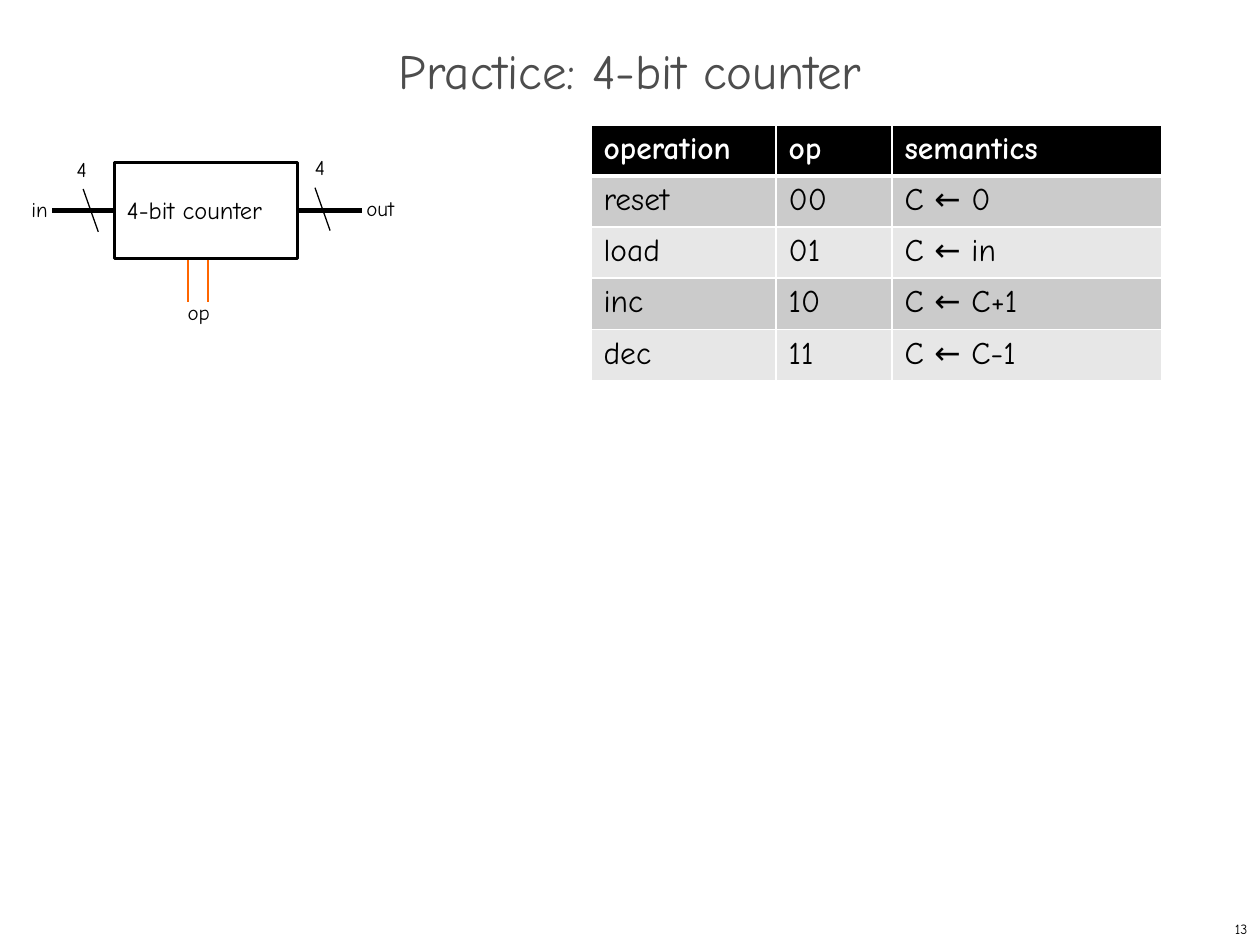
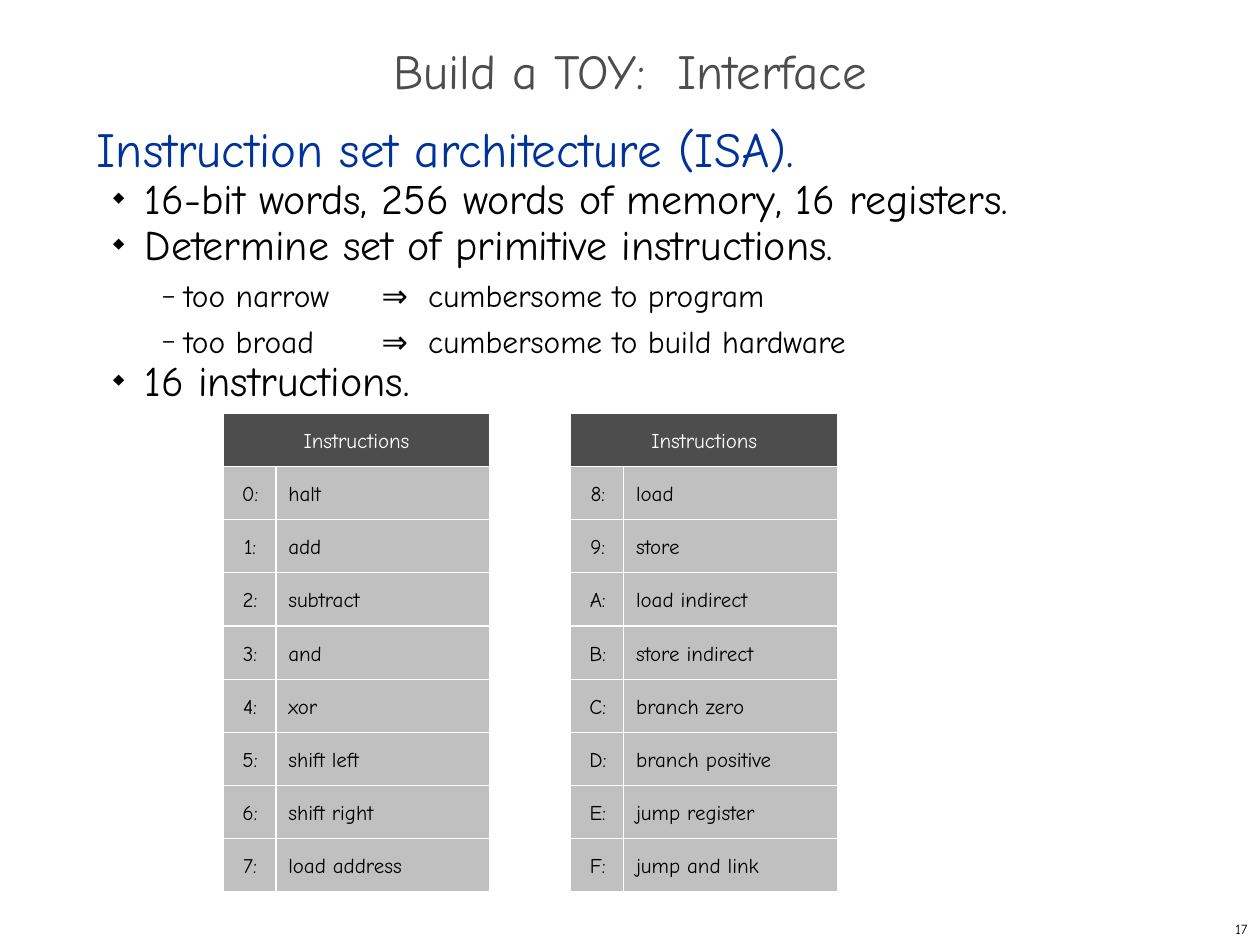
from dataclasses import dataclass

from lxml.etree import SubElement
from pptx import Presentation
from pptx.dml.color import RGBColor
from pptx.enum.shapes import MSO_CONNECTOR, MSO_SHAPE
from pptx.enum.text import MSO_ANCHOR, PP_ALIGN
from pptx.oxml.ns import qn
from pptx.shapes.autoshape import Shape
from pptx.slide import Slide
from pptx.table import _Cell
from pptx.text.text import TextFrame, _Paragraph
from pptx.util import Inches, Pt

FONT = "Comic Neue"
BLACK = RGBColor(0x00, 0x00, 0x00)
WHITE = RGBColor(0xFF, 0xFF, 0xFF)
CHARCOAL = RGBColor(0x4D, 0x4D, 0x4D)
SILVER = RGBColor(0xC0, 0xC0, 0xC0)
BAND_DARK = RGBColor(0xCB, 0xCB, 0xCB)
BAND_LIGHT = RGBColor(0xE7, 0xE7, 0xE7)
ORANGE = RGBColor(0xFF, 0x66, 0x00)
BLUE = RGBColor(0x00, 0x33, 0x99)


@dataclass(frozen=True)
class Box:
    left: float
    top: float
    width: float
    height: float

    def lengths(self) -> tuple[Inches, ...]:
        return tuple(Inches(v) for v in (self.left, self.top, self.width, self.height))


@dataclass(frozen=True)
class Label:
    text: str
    box: Box
    size: int = 12


@dataclass(frozen=True)
class Wire:
    start: tuple[float, float]
    end: tuple[float, float]
    width: float
    color: RGBColor = BLACK


@dataclass(frozen=True)
class Level:
    size: int
    color: RGBColor = BLACK
    bullet: str = ""
    bullet_percent: int = 100
    margin: float = 0
    hanging: float = 0
    tabs: tuple[float, ...] = ()


@dataclass(frozen=True)
class Tile:
    text: str
    box: Box
    fill: RGBColor = SILVER
    color: RGBColor = BLACK
    alignment: PP_ALIGN = PP_ALIGN.CENTER


TITLE_BOX = Box(0, 0.36, 10, 0.5)
NUMBER_BOX = Box(7.92, 7.25, 2.08, 0.25)

COUNTER_BOX = Box(0.91, 1.29, 1.45, 0.76)
COUNTER_LABELS = (
    Label("4-bit counter", Box(0.91, 1.5, 1.43, 0.34), 14),
    Label("4", Box(0.51, 1.19, 0.31, 0.3)),
    Label("4", Box(2.4, 1.18, 0.31, 0.3)),
    Label("in", Box(0.15, 1.51, 0.34, 0.3)),
    Label("out", Box(2.81, 1.5, 0.46, 0.3)),
    Label("op", Box(1.39, 2.33, 0.38, 0.3)),
)
COUNTER_WIRES = (
    Wire((0.91, 1.67), (0.41, 1.67), 2.5),
    Wire((2.87, 1.67), (2.37, 1.67), 2.5),
    Wire((1.49, 2.05), (1.49, 2.4), 1.25, ORANGE),
    Wire((1.65, 2.05), (1.65, 2.4), 1.25, ORANGE),
    Wire((0.66, 1.5), (0.78, 1.84), 0.75),
    Wire((2.5, 1.49), (2.62, 1.83), 0.75),
)
OPERATIONS = (
    ("operation", "op", "semantics"),
    ("reset", "00", "C ← 0"),
    ("load", "01", "C ← in"),
    ("inc", "10", "C ← C+1"),
    ("dec", "11", "C ← C-1"),
)
OPERATIONS_BOX = Box(4.69, 0.99, 4.53, 2.03)
OPERATION_WIDTHS = (1.47, 0.92, 2.14)

LEVELS = (
    Level(28, BLUE),
    Level(24, bullet="◆", bullet_percent=35, margin=0.38, hanging=0.25),
    Level(18, bullet="–", bullet_percent=80, margin=0.69, hanging=0.18, tabs=(2.26, 2.63)),
)
ISA_POINTS = (
    (0, "Instruction set architecture (ISA)."),
    (1, "16-bit words, 256 words of memory, 16 registers."),
    (1, "Determine set of primitive instructions."),
    (2, "too narrow\t⇒\tcumbersome to program"),
    (2, "too broad\t⇒\tcumbersome to build hardware"),
    (1, "16 instructions."),
)
INSTRUCTIONS = (
    "halt", "add", "subtract", "and", "xor", "shift left", "shift right", "load address",
    "load", "store", "load indirect", "store indirect",
    "branch zero", "branch positive", "jump register", "jump and link",
)
INSTRUCTION_LEFTS = (1.77, 4.53)
INSTRUCTIONS_TOP = 3.28
INSTRUCTIONS_PER_COLUMN = 8
TILE_HEIGHT = 3.8 / (INSTRUCTIONS_PER_COLUMN + 1)
OPCODE_WIDTH = 0.43
NAME_WIDTH = 1.7
HEADER_WIDTH = 2.12


def write(paragraph: _Paragraph, text: str, size: int, color: RGBColor = BLACK,
          bold: bool = False) -> None:
    run = paragraph.add_run()
    run.text = text
    run.font.name = FONT
    run.font.size = Pt(size)
    run.font.bold = bold
    run.font.color.rgb = color


def add_text_frame(slide: Slide, box: Box, wrap: bool = True) -> TextFrame:
    frame = slide.shapes.add_textbox(*box.lengths()).text_frame
    frame.word_wrap = wrap
    return frame


def add_frame_slide(deck: Presentation, title: str, number: int) -> Slide:
    """Add a blank slide with the shared title and slide number."""
    slide = deck.slides.add_slide(deck.slide_layouts[6])
    heading = add_text_frame(slide, TITLE_BOX)
    heading.vertical_anchor = MSO_ANCHOR.MIDDLE
    heading.paragraphs[0].alignment = PP_ALIGN.CENTER
    heading.paragraphs[0].line_spacing = 0.7
    write(heading.paragraphs[0], title, 28, CHARCOAL)
    footer = add_text_frame(slide, NUMBER_BOX)
    footer.vertical_anchor = MSO_ANCHOR.MIDDLE
    footer.paragraphs[0].alignment = PP_ALIGN.RIGHT
    write(footer.paragraphs[0], str(number), 8)
    return slide


def add_label(slide: Slide, label: Label) -> None:
    frame = add_text_frame(slide, label.box, wrap=False)
    write(frame.paragraphs[0], label.text, label.size)


def add_wire(slide: Slide, wire: Wire) -> None:
    ends = (Inches(v) for v in (*wire.start, *wire.end))
    line = slide.shapes.add_connector(MSO_CONNECTOR.STRAIGHT, *ends)
    line.line.color.rgb = wire.color
    line.line.width = Pt(wire.width)
    SubElement(line._element.spPr, qn("a:effectLst"))


def add_rectangle(slide: Slide, box: Box, outline: RGBColor, width: float) -> Shape:
    rectangle = slide.shapes.add_shape(MSO_SHAPE.RECTANGLE, *box.lengths())
    rectangle.shadow.inherit = False
    rectangle.fill.background()
    rectangle.line.color.rgb = outline
    rectangle.line.width = Pt(width)
    return rectangle


def add_tile(slide: Slide, tile: Tile) -> None:
    rectangle = add_rectangle(slide, tile.box, WHITE, 0.75)
    rectangle.fill.solid()
    rectangle.fill.fore_color.rgb = tile.fill
    frame = rectangle.text_frame
    frame.word_wrap = False
    frame.vertical_anchor = MSO_ANCHOR.MIDDLE
    frame.paragraphs[0].alignment = tile.alignment
    write(frame.paragraphs[0], tile.text, 12, tile.color)


def set_borders(cell: _Cell, top: float, bottom: float) -> None:
    properties = cell._tc.get_or_add_tcPr()
    for edge, width in (("lnL", 1), ("lnR", 1), ("lnT", top), ("lnB", bottom)):
        line = SubElement(properties, qn(f"a:{edge}"), w=str(Pt(width)))
        fill = SubElement(line, qn("a:solidFill"))
        SubElement(fill, qn("a:srgbClr"), val=str(WHITE))


def add_operations(slide: Slide) -> None:
    table = slide.shapes.add_table(
        len(OPERATIONS), len(OPERATION_WIDTHS), *OPERATIONS_BOX.lengths()).table
    for column, width in zip(table.columns, OPERATION_WIDTHS):
        column.width = Inches(width)
    for r, texts in enumerate(OPERATIONS):
        header = r == 0
        band = BAND_DARK if r % 2 else BAND_LIGHT
        for c, text in enumerate(texts):
            cell = table.cell(r, c)
            set_borders(cell, top=3 if r == 1 else 1, bottom=3 if header else 1)
            cell.fill.solid()
            cell.fill.fore_color.rgb = BLACK if header else band
            write(cell.text_frame.paragraphs[0], text, 18,
                  WHITE if header else BLACK, bold=header)


def add_instructions(slide: Slide, left: float, first: int) -> None:
    """Draw a header and one column of instructions, starting at opcode first."""
    for row in range(INSTRUCTIONS_PER_COLUMN):
        code = first + row
        top = INSTRUCTIONS_TOP + (row + 1) * TILE_HEIGHT
        add_tile(slide, Tile(f"{code:X}:", Box(left, top, OPCODE_WIDTH, TILE_HEIGHT)))
        add_tile(slide, Tile(INSTRUCTIONS[code],
                             Box(left + OPCODE_WIDTH - 0.01, top, NAME_WIDTH, TILE_HEIGHT),
                             alignment=PP_ALIGN.LEFT))
    add_tile(slide, Tile("Instructions", Box(left, INSTRUCTIONS_TOP, HEADER_WIDTH, TILE_HEIGHT),
                         fill=CHARCOAL, color=WHITE))


def format_level(paragraph: _Paragraph, level: Level) -> None:
    paragraph.line_spacing = Pt(26)
    properties = paragraph._p.get_or_add_pPr()
    properties.set("marL", str(Inches(level.margin)))
    properties.set("indent", str(-Inches(level.hanging)))
    if level.bullet:
        color = SubElement(properties, qn("a:buClr"))
        SubElement(color, qn("a:srgbClr"), val=str(BLACK))
        SubElement(properties, qn("a:buSzPct"), val=str(level.bullet_percent * 1000))
        SubElement(properties, qn("a:buFont"), typeface=FONT)
        SubElement(properties, qn("a:buChar"), char=level.bullet)
    if level.tabs:
        stops = SubElement(properties, qn("a:tabLst"))
        for position in level.tabs:
            SubElement(stops, qn("a:tab"), pos=str(Inches(position)), algn="l")


def add_points(slide: Slide, box: Box) -> None:
    frame = add_text_frame(slide, box)
    for i, (depth, text) in enumerate(ISA_POINTS):
        paragraph = frame.add_paragraph() if i else frame.paragraphs[0]
        paragraph.level = depth
        format_level(paragraph, LEVELS[depth])
        write(paragraph, text, LEVELS[depth].size, LEVELS[depth].color)


def build_counter_slide(deck: Presentation) -> None:
    slide = add_frame_slide(deck, "Practice: 4-bit counter", 13)
    for wire in COUNTER_WIRES:
        add_wire(slide, wire)
    for label in COUNTER_LABELS:
        add_label(slide, label)
    add_operations(slide)
    add_rectangle(slide, COUNTER_BOX, BLACK, 1.5)


def build_interface_slide(deck: Presentation) -> None:
    slide = add_frame_slide(deck, "Build a TOY:  Interface", 17)
    add_points(slide, Box(0.67, 1, 8.58, 5.92))
    for column, left in enumerate(INSTRUCTION_LEFTS):
        add_instructions(slide, left, column * INSTRUCTIONS_PER_COLUMN)


def main() -> None:
    deck = Presentation()
    deck.slide_width, deck.slide_height = Inches(10), Inches(7.5)
    build_counter_slide(deck)
    build_interface_slide(deck)
    deck.save("out.pptx")


if __name__ == "__main__":
    main()
